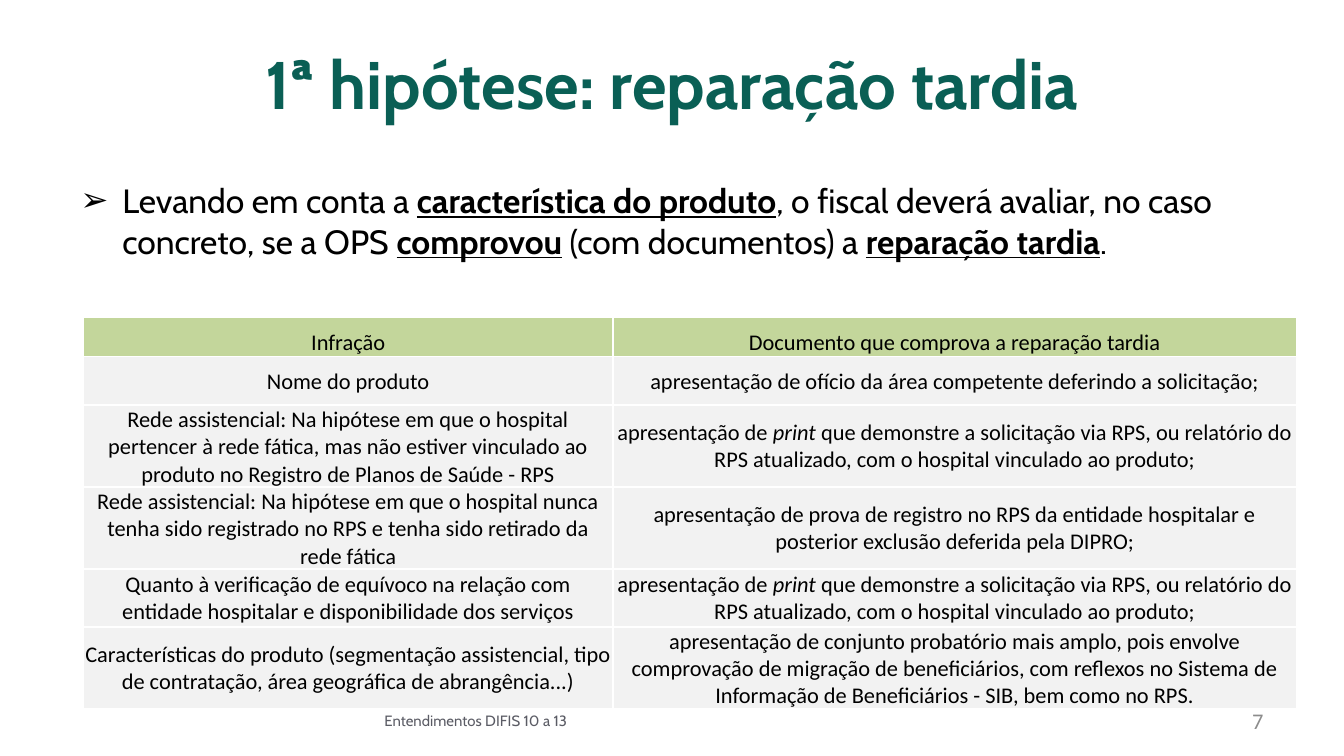
import lxml.etree
import pptx
import pptx.dml.color
import pptx.enum.text
import pptx.oxml.ns
import pptx.util

Pt = pptx.util.Pt
ALIGN = pptx.enum.text.PP_ALIGN
ANCHOR = pptx.enum.text.MSO_ANCHOR

COLORS = {
    "title": "0A5F55",
    "text": "000000",
    "footer": "5B5C65",
    "number": "8C8C8C",
    "header": "C3D69B",
    "body": "F2F2F2",
    "border": "FFFFFF",
}

PRINT_REPORT = [
    ("apresentação de ", ""),
    ("print", "i"),
    (" que demonstre a solicitação via RPS, ou relatório do RPS atualizado, "
     "com o hospital vinculado ao produto;", ""),
]

TABLE_ROWS = [
    ("Infração", "Documento que comprova a reparação tardia"),
    ("Nome do produto",
     "apresentação de ofício da área competente deferindo a solicitação;"),
    ("Rede assistencial: Na hipótese em que o hospital pertencer à rede fática, "
     "mas não estiver vinculado ao produto no Registro de Planos de Saúde - RPS",
     PRINT_REPORT),
    ("Rede assistencial: Na hipótese em que o hospital nunca tenha sido "
     "registrado no RPS e tenha sido retirado da rede fática",
     "apresentação de prova de registro no RPS da entidade hospitalar e "
     "posterior exclusão deferida pela DIPRO;"),
    ("Quanto à verificação de equívoco na relação com entidade hospitalar e "
     "disponibilidade dos serviços",
     PRINT_REPORT),
    ("Características do produto (segmentação assistencial, tipo de contratação, "
     "área geográfica de abrangência...)",
     "apresentação de conjunto probatório mais amplo, pois envolve comprovação "
     "de migração de beneficiários, com reflexos no Sistema de Informação de "
     "Beneficiários - SIB, bem como no RPS."),
]


def rgb(name):
    return pptx.dml.color.RGBColor.from_string(COLORS[name])


def add_element(parent, tag, **attributes):
    return lxml.etree.SubElement(parent, pptx.oxml.ns.qn(tag), attributes)


class SlideBuilder:
    heading_font = "Cabin"
    table_font = "Calibri"

    def __init__(self, slide):
        self.slide = slide

    def fill_paragraph(self, paragraph, content, size, font, color, align,
                       bold=False):
        """Content is a string or (text, marks) pairs; marks: b, i, u."""
        if isinstance(content, str):
            content = [(content, "")]
        paragraph.alignment = align
        for text, marks in content:
            run = paragraph.add_run()
            run.text = text
            run.font.size = Pt(size)
            run.font.name = font
            run.font.color.rgb = rgb(color)
            run.font.bold = bold or "b" in marks
            run.font.italic = "i" in marks
            run.font.underline = "u" in marks

    def text(self, box, content, size, font, color, align,
             anchor=ANCHOR.MIDDLE, bold=False, bullet=None):
        shape = self.slide.shapes.add_textbox(*map(Pt, box))
        text_frame = shape.text_frame
        text_frame.word_wrap = True
        text_frame.vertical_anchor = anchor
        paragraph = text_frame.paragraphs[0]
        if bullet:
            self.bullet(paragraph, bullet, 22.5)
        self.fill_paragraph(paragraph, content, size, font, color, align, bold)

    def bullet(self, paragraph, character, indent):
        properties = paragraph._p.get_or_add_pPr()
        properties.set("marL", str(Pt(indent)))
        properties.set("indent", str(-Pt(indent)))
        add_element(properties, "a:buFont", typeface="Arial")
        add_element(properties, "a:buChar", char=character)

    def borders(self, cell):
        properties = cell._tc.get_or_add_tcPr()
        for side in ("L", "R", "T", "B"):
            line = add_element(properties, f"a:ln{side}", w=str(Pt(1)))
            fill = add_element(line, "a:solidFill")
            add_element(fill, "a:srgbClr", val=COLORS["border"])

    def table(self, left, top, widths, heights, rows):
        frame = self.slide.shapes.add_table(
            len(rows), len(widths), Pt(left), Pt(top),
            Pt(sum(widths)), Pt(sum(heights)))
        table = frame.table
        table.horz_banding = False
        table.first_row = False
        for column, width in zip(table.columns, widths):
            column.width = Pt(width)
        for index, (row, height, contents) in enumerate(
                zip(table.rows, heights, rows)):
            row.height = Pt(height)
            is_header = index == 0
            for cell, content in zip(row.cells, contents):
                self.borders(cell)
                cell.fill.solid()
                cell.fill.fore_color.rgb = rgb("header" if is_header else "body")
                cell.margin_left = cell.margin_right = cell.margin_top = Pt(0.7)
                cell.margin_bottom = Pt(0)
                cell.vertical_anchor = ANCHOR.BOTTOM if is_header else ANCHOR.MIDDLE
                self.fill_paragraph(cell.text_frame.paragraphs[0], content, 12,
                                    self.table_font, "text", ALIGN.CENTER)


def main():
    presentation = pptx.Presentation()
    presentation.slide_width = Pt(720)
    presentation.slide_height = Pt(405)
    slide = presentation.slides.add_slide(presentation.slide_layouts[6])
    builder = SlideBuilder(slide)

    builder.text((36, 10, 648, 68), "1ª hipótese: reparação tardia", 36,
                 builder.heading_font, "title", ALIGN.CENTER, bold=True)
    builder.text((36, 93, 648, 260), [
        ("Levando em conta a ", ""),
        ("característica do produto", "bu"),
        (", o fiscal deverá avaliar, no caso concreto, se a OPS ", ""),
        ("comprovou", "bu"),
        (" (com documentos) a ", ""),
        ("reparação tardia", "bu"),
        (".", ""),
    ], 18, builder.heading_font, "text", ALIGN.LEFT, ANCHOR.TOP, bullet="➢")
    builder.text((516, 375, 168, 21.6), "7", 12,
                 builder.table_font, "number", ALIGN.RIGHT)
    builder.text((36, 375, 438, 21.6), "Entendimentos DIFIS 10 a 13", 8,
                 builder.heading_font, "footer", ALIGN.CENTER)
    builder.table(44.8, 170, (283.5, 366.5), (21, 26, 40.5, 40.5, 31, 40.5),
                  TABLE_ROWS)

    presentation.save("out.pptx")


if __name__ == "__main__":
    main()
